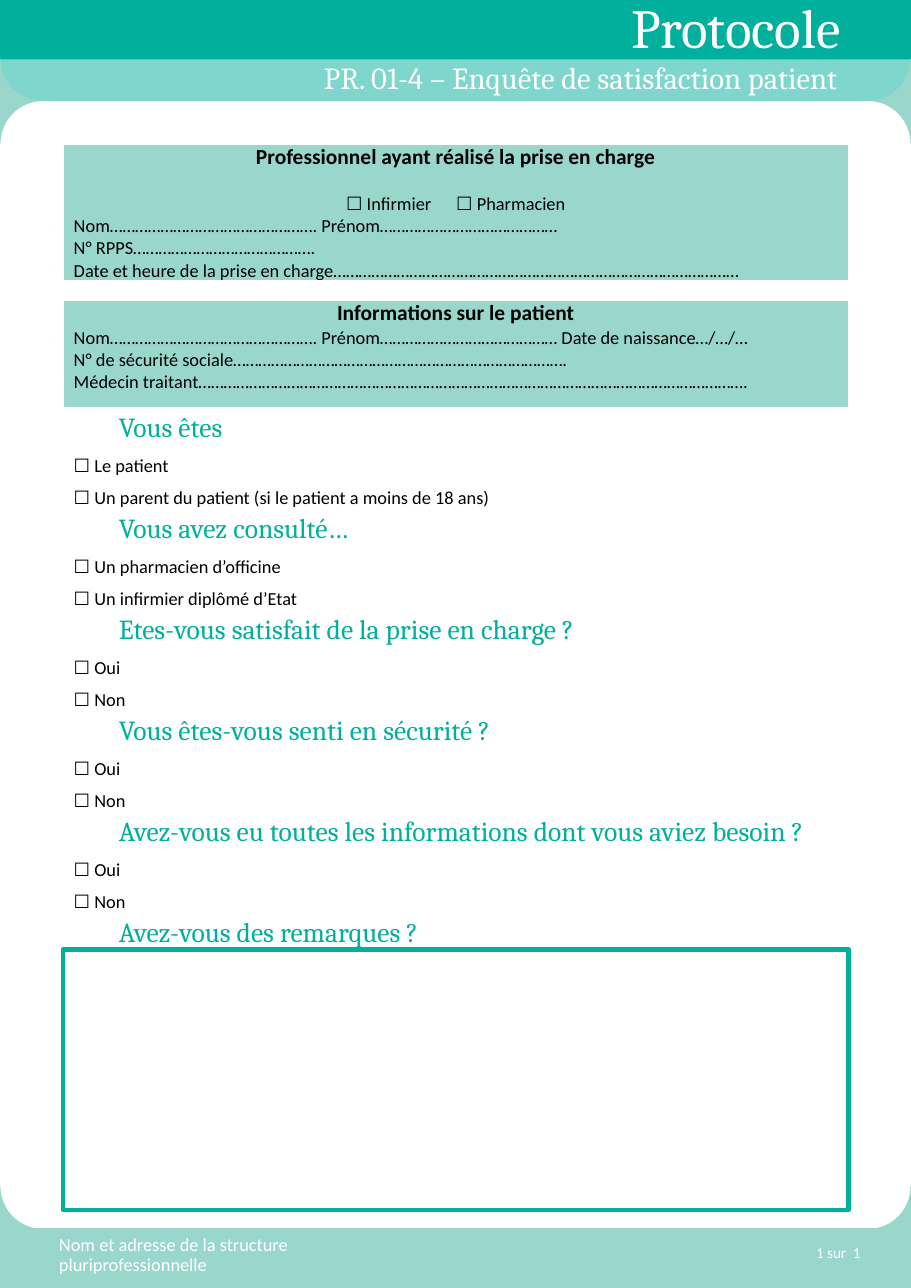
import lxml.etree
import pptx
import pptx.dml.color
import pptx.enum.shapes
import pptx.enum.text
import pptx.oxml.ns
import pptx.util

Cm = pptx.util.Cm
Pt = pptx.util.Pt
PRESET = pptx.enum.shapes.MSO_SHAPE
ANCHOR = pptx.enum.text.MSO_ANCHOR
ALIGN = pptx.enum.text.PP_ALIGN
qn = pptx.oxml.ns.qn

TEAL, MINT, WHITE, BLACK = "00AF9C", "99D7CD", "FFFFFF", "000000"
SERIF, SANS = "Cambria", "Calibri"
PAGE_WIDTH, PAGE_HEIGHT = 21.0, 29.7
LEFT, CONTENT_WIDTH = 1.45, 18.11

PROFESSIONAL = [
    "Nom…………………………………………. Prénom……………………………………",
    "N° RPPS…………………………………….",
    "Date et heure de la prise en charge"
    "……………………………………………………………………………………",
]
PATIENT = [
    "Nom…………………………………………. Prénom…………………………………… Date de naissance…/…/…",
    "N° de sécurité sociale…………………………………………………………………….",
    "Médecin traitant"
    "………………………………………………………………………………………………………………….",
]
YES_NO = ["Oui", "Non"]
QUESTIONS = [
    ("Vous êtes", ["Le patient", "Un parent du patient (si le patient a moins de 18 ans)"]),
    ("Vous avez consulté…", ["Un pharmacien d’officine", "Un infirmier diplômé d’Etat"]),
    ("Etes-vous satisfait de la prise en charge ?", YES_NO),
    ("Vous êtes-vous senti en sécurité ?", YES_NO),
    ("Avez-vous eu toutes les informations dont vous aviez besoin ?", YES_NO),
    ("Avez-vous des remarques ?", []),
]


def rgb(color):
    return pptx.dml.color.RGBColor.from_string(color)


def write(frame, text, size=12, font=SANS, color=BLACK, bold=False,
          align=ALIGN.LEFT, before=0, spacing=1.0, indent=0):
    """Add one paragraph to a text frame, filling the empty first one if any."""
    first = not frame.text
    paragraph = frame.paragraphs[0] if first else frame.add_paragraph()
    paragraph.alignment = align
    paragraph.line_spacing = spacing
    paragraph.space_before = Pt(0 if first else before)
    if indent:
        paragraph._p.get_or_add_pPr().set("marL", str(Cm(indent)))
    run = paragraph.add_run()
    run.text = text
    run.font.size = Pt(size)
    run.font.name = font
    run.font.bold = bold
    run.font.color.rgb = rgb(color)


def add_text_box(slide, left, top, width, height, anchor=ANCHOR.TOP):
    frame = slide.shapes.add_textbox(Cm(left), Cm(top), Cm(width), Cm(height)).text_frame
    frame.word_wrap = True
    frame.vertical_anchor = anchor
    return frame


def add_block(slide, preset, left, top, width, height, fill=None, line=None, opacity=100):
    block = slide.shapes.add_shape(preset, Cm(left), Cm(top), Cm(width), Cm(height))
    block.shadow.inherit = False
    if fill:
        block.fill.solid()
        block.fill.fore_color.rgb = rgb(fill)
    else:
        block.fill.background()
    if line:
        block.line.color.rgb = rgb(line)
        block.line.width = Pt(3)
    else:
        block.line.fill.background()
    if opacity < 100:
        tint = block._element.spPr.find(".//" + qn("a:srgbClr"))
        lxml.etree.SubElement(tint, qn("a:alpha")).set("val", str(opacity * 1000))
    return block


def add_corners(slide, top):
    """Concave plaques that round both sides of the white page."""
    for center in (-0.06, PAGE_WIDTH + 0.06):
        corner = add_block(slide, PRESET.PLAQUE, center - 1.05, top, 2.1, 1.96, MINT)
        corner.adjustments[0] = 0.5


def add_border(cell):
    properties = cell._tc.get_or_add_tcPr()
    for position, side in enumerate(("a:lnL", "a:lnR", "a:lnT", "a:lnB")):
        border = lxml.etree.Element(qn(side), w=str(Pt(1)))
        fill = lxml.etree.SubElement(border, qn("a:solidFill"))
        lxml.etree.SubElement(fill, qn("a:srgbClr"), val=WHITE)
        properties.insert(position, border)


def add_form(slide, top, height, title, lines, choices=None):
    table = slide.shapes.add_table(
        1, 1, Cm(LEFT), Cm(top), Cm(CONTENT_WIDTH), Cm(height)).table
    table.first_row = table.horz_banding = False
    cell = table.cell(0, 0)
    cell.fill.solid()
    cell.fill.fore_color.rgb = rgb(MINT)
    cell.margin_left = cell.margin_right = Cm(0.25)
    cell.margin_top = cell.margin_bottom = 0
    add_border(cell)
    write(cell.text_frame, title, size=14, bold=True, align=ALIGN.CENTER)
    if choices:
        write(cell.text_frame, choices, align=ALIGN.CENTER, before=14.6)
    for line in lines:
        write(cell.text_frame, line)


def add_page_frame(slide):
    add_block(slide, PRESET.RECTANGLE, 0, 1.24, PAGE_WIDTH, 1.09, TEAL, opacity=50)
    add_block(slide, PRESET.RECTANGLE, 0, 0, PAGE_WIDTH, 1.37, TEAL)
    add_corners(slide, 1.35)
    add_block(slide, PRESET.RECTANGLE, 0, 28.32, PAGE_WIDTH, 1.38, MINT)
    add_corners(slide, 27.36)


def add_questions(slide):
    frame = add_text_box(slide, LEFT, 9.42, 18.64, 12.5)
    for question, answers in QUESTIONS:
        write(frame, question, size=18, font=SERIF, color=TEAL,
              before=4.1, spacing=0.9, indent=1.04)
        for answer in answers:
            write(frame, f"☐ {answer}", before=8.3, spacing=0.9)


def main():
    deck = pptx.Presentation()
    deck.slide_width, deck.slide_height = Cm(PAGE_WIDTH), Cm(PAGE_HEIGHT)
    slide = deck.slides.add_slide(deck.slide_layouts[6])

    # Header and footer bands
    add_page_frame(slide)
    write(add_text_box(slide, 14.3, -0.28, 6.7, 1.8), "Protocole",
          size=36, font=SERIF, color=WHITE)
    write(add_text_box(slide, 3.91, 1.32, 15.65, 1.02, ANCHOR.MIDDLE),
          "PR. 01-4 – Enquête de satisfaction patient",
          size=20, font=SERIF, color=WHITE, align=ALIGN.RIGHT, spacing=0.9)

    # Survey questions
    add_questions(slide)

    # Identification forms
    add_form(slide, 3.33, 3.12, "Professionnel ayant réalisé la prise en charge",
             PROFESSIONAL, choices="☐ Infirmier\t☐ Pharmacien")
    add_form(slide, 6.93, 2.46, "Informations sur le patient", PATIENT)

    # Remarks area
    add_block(slide, PRESET.RECTANGLE, LEFT, 21.9, CONTENT_WIDTH, 6, line=TEAL)

    # Footer texts
    write(add_text_box(slide, 15.5, 28.47, 4.59, 0.8, ANCHOR.MIDDLE), "1 sur  1",
          size=9.9, color=WHITE, align=ALIGN.RIGHT)
    write(add_text_box(slide, 1.11, 28.37, 6.86, 1.22),
          "Nom et adresse de la structure pluriprofessionnelle",
          color=WHITE, spacing=0.9)

    deck.save("out.pptx")


if __name__ == "__main__":
    main()
